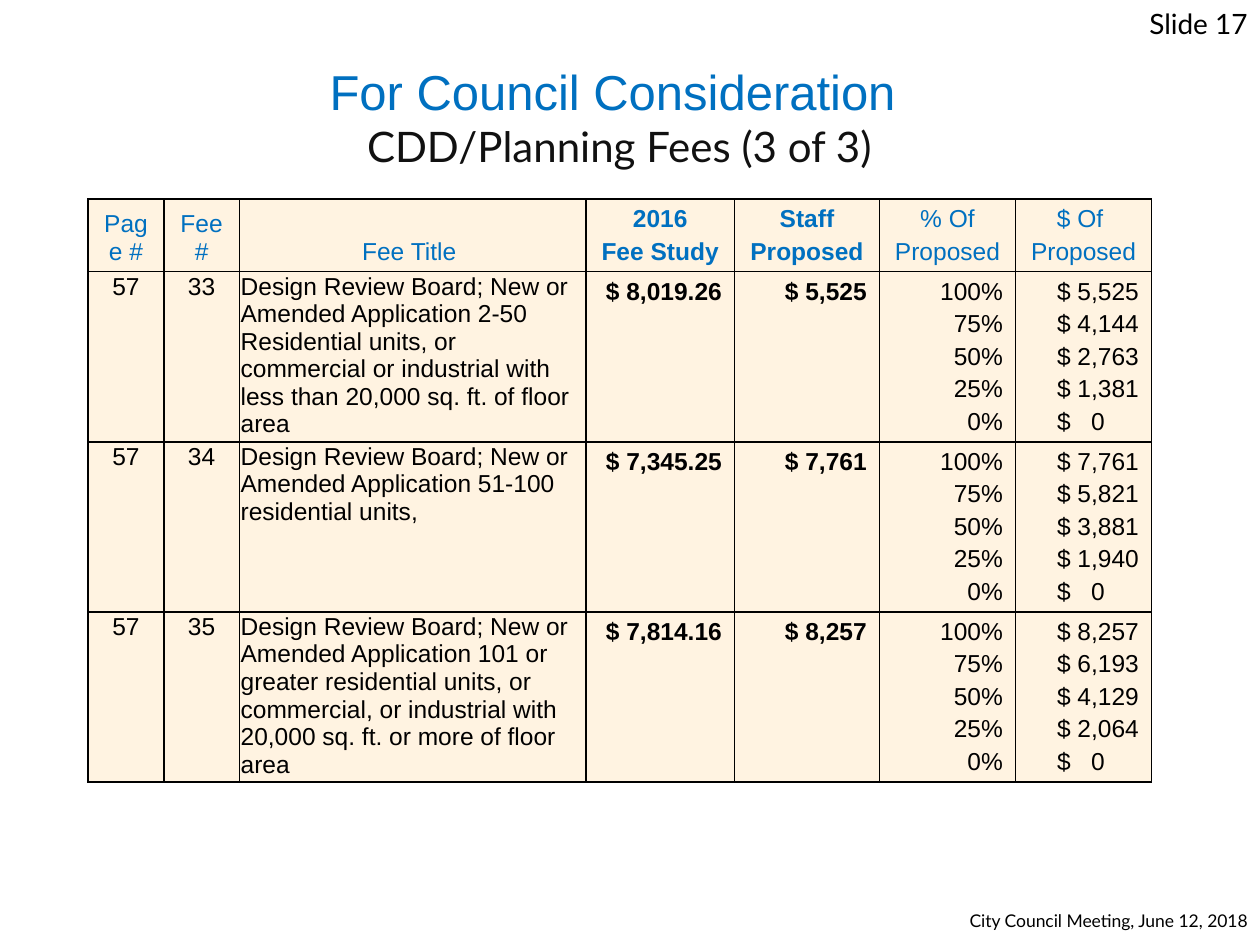
from typing import NamedTuple

from lxml.etree import SubElement
from pptx import Presentation
from pptx.dml.color import RGBColor
from pptx.enum.text import MSO_ANCHOR, MSO_AUTO_SIZE, PP_ALIGN
from pptx.oxml.ns import qn
from pptx.util import Inches, Pt

BLUE = RGBColor(0x00, 0x70, 0xC0)
BLACK = RGBColor(0x00, 0x00, 0x00)
DARK = RGBColor(0x11, 0x11, 0x11)
CREAM = RGBColor(0xFF, 0xF3, 0xE1)

WIDTHS = (0.6, 0.6, 2.75, 1.18, 1.15, 1.08, 1.08)
HEIGHTS = (0.57, 1.35, 1.35, 1.35)
WIDE = (0.1, 0.05, 0.1, 0.05)
TIGHT = (0.01, 0.01, 0.01, 0)
RATES = "100%\n75%\n50%\n25%\n0%"
ZERO = "$\t0"


class Look(NamedTuple):
    align: PP_ALIGN
    inset: tuple
    bold: bool = False
    color: RGBColor = BLACK
    anchor: MSO_ANCHOR = MSO_ANCHOR.TOP


class Fee(NamedTuple):
    page: str
    number: str
    title: str
    study: str
    staff: str
    shares: tuple


HEADS = ("Page #", "Fee #", "Fee Title ", "2016\nFee Study",
         "Staff\nProposed", "% Of\nProposed", "$ Of \nProposed")
BOLD = (False, False, False, True, True, False, False)
MID = Look(PP_ALIGN.CENTER, TIGHT)
LEFT = Look(PP_ALIGN.LEFT, TIGHT)
SUM = Look(PP_ALIGN.RIGHT, WIDE, True)
LIST = Look(PP_ALIGN.RIGHT, WIDE)
LOOKS = (MID, MID, LEFT, SUM, SUM, LIST, LIST)

FEES = (
    Fee("57", "33",
        "Design Review Board; New or Amended Application 2-50 Residential "
        "units, or commercial or industrial with less than 20,000 sq. ft. "
        "of floor area",
        "$ 8,019.26", "$ 5,525",
        ("$ 5,525", "$ 4,144", "$ 2,763", "$ 1,381", ZERO)),
    Fee("57", "34",
        "Design Review Board; New or Amended Application 51-100 "
        "residential units,",
        "$ 7,345.25", "$ 7,761",
        ("$ 7,761", "$ 5,821", "$ 3,881", "$ 1,940", ZERO)),
    Fee("57", "35",
        "Design Review Board; New or Amended Application 101 or greater "
        "residential units, or commercial, or industrial with 20,000 sq. ft. "
        "or more of floor area",
        "$ 7,814.16", "$ 8,257",
        ("$ 8,257", "$ 6,193", "$ 4,129", "$ 2,064", ZERO)),
)


def style(font, name: str, size: float, color: RGBColor, bold=False) -> None:
    font.name, font.size, font.bold = name, Pt(size), bold
    font.color.rgb = color


def border(cell) -> None:
    props = cell._tc.get_or_add_tcPr()
    for side in ("a:lnL", "a:lnR", "a:lnT", "a:lnB"):
        line = SubElement(props, qn(side), w=str(Pt(1)))
        fill = SubElement(line, qn("a:solidFill"))
        SubElement(fill, qn("a:srgbClr"), val=str(BLACK))


def split(para) -> None:
    """Set the dollar sign and the digits apart with a right tab."""
    para.alignment = PP_ALIGN.LEFT
    props = para._p.get_or_add_pPr()
    props.set("marL", "0")
    props.set("indent", str(Inches(0.23)))
    tabs = SubElement(props, qn("a:tabLst"))
    SubElement(tabs, qn("a:tab"), pos=str(Inches(0.87)), algn="r")


def fill_cell(cell, text: str, look: Look) -> None:
    border(cell)
    cell.fill.solid()
    cell.fill.fore_color.rgb = CREAM
    (cell.margin_left, cell.margin_top,
     cell.margin_right, cell.margin_bottom) = map(Inches, look.inset)
    cell.vertical_anchor = look.anchor
    cell.text = text
    for i, para in enumerate(cell.text_frame.paragraphs):
        para.alignment = look.align
        if i:
            para.space_before = Pt(2.8)
        if "\t" in para.text:
            split(para)
        style(para.font, "Arial", 14, look.color, look.bold)


def add_title(slide) -> None:
    title = slide.shapes.title
    title.left, title.top = Inches(0.75), Inches(0.42)
    title.width, title.height = Inches(8.33), Inches(1)
    frame = title.text_frame
    frame.auto_size = MSO_AUTO_SIZE.NONE
    frame.vertical_anchor = MSO_ANCHOR.MIDDLE
    para = frame.paragraphs[0]
    para.alignment = PP_ALIGN.CENTER
    run = para.add_run()
    run.text = "For Council Consideration "
    style(run.font, "Arial", 28, BLUE)
    para.add_line_break()
    run = para.add_run()
    run.text = "CDD/Planning Fees (3 of 3)"
    style(run.font, "Lato", 24, DARK)


def add_table(slide) -> None:
    frame = slide.shapes.add_table(
        len(HEIGHTS), len(WIDTHS), Inches(0.7), Inches(1.58),
        Inches(sum(WIDTHS)), Inches(sum(HEIGHTS)))
    table = frame.table
    table.first_row = table.horz_banding = False
    for col, width in zip(table.columns, WIDTHS):
        col.width = Inches(width)
    for row, height in zip(table.rows, HEIGHTS):
        row.height = Inches(height)
    for i, (head, bold) in enumerate(zip(HEADS, BOLD)):
        fill_cell(table.cell(0, i), head, Look(
            PP_ALIGN.CENTER, WIDE, bold, BLUE, MSO_ANCHOR.BOTTOM))
    for r, fee in enumerate(FEES, 1):
        texts = (*fee[:5], RATES, "\n".join(fee.shares))
        for c, (text, look) in enumerate(zip(texts, LOOKS)):
            fill_cell(table.cell(r, c), text, look)


def add_note(slide, text: str, size: float, left: float, top: float,
             width: float, height: float) -> None:
    box = slide.shapes.add_textbox(*map(Inches, (left, top, width, height)))
    frame = box.text_frame
    frame.word_wrap = True
    frame.margin_right = Inches(0.1)
    frame.text = text
    para = frame.paragraphs[0]
    para.alignment = PP_ALIGN.RIGHT
    style(para.font, "Lato", size, BLACK)


def main() -> None:
    deck = Presentation()
    deck.slide_width, deck.slide_height = Inches(10), Inches(7.5)
    slide = deck.slides.add_slide(deck.slide_layouts[5])
    add_title(slide)
    add_table(slide)
    add_note(slide, "City Council Meeting, June 12, 2018", 10,
             6.83, 7.17, 3.17, 0.33)
    add_note(slide, "Slide 17", 16, 7.67, 0, 2.33, 0.5)
    deck.save("out.pptx")


if __name__ == "__main__":
    main()
